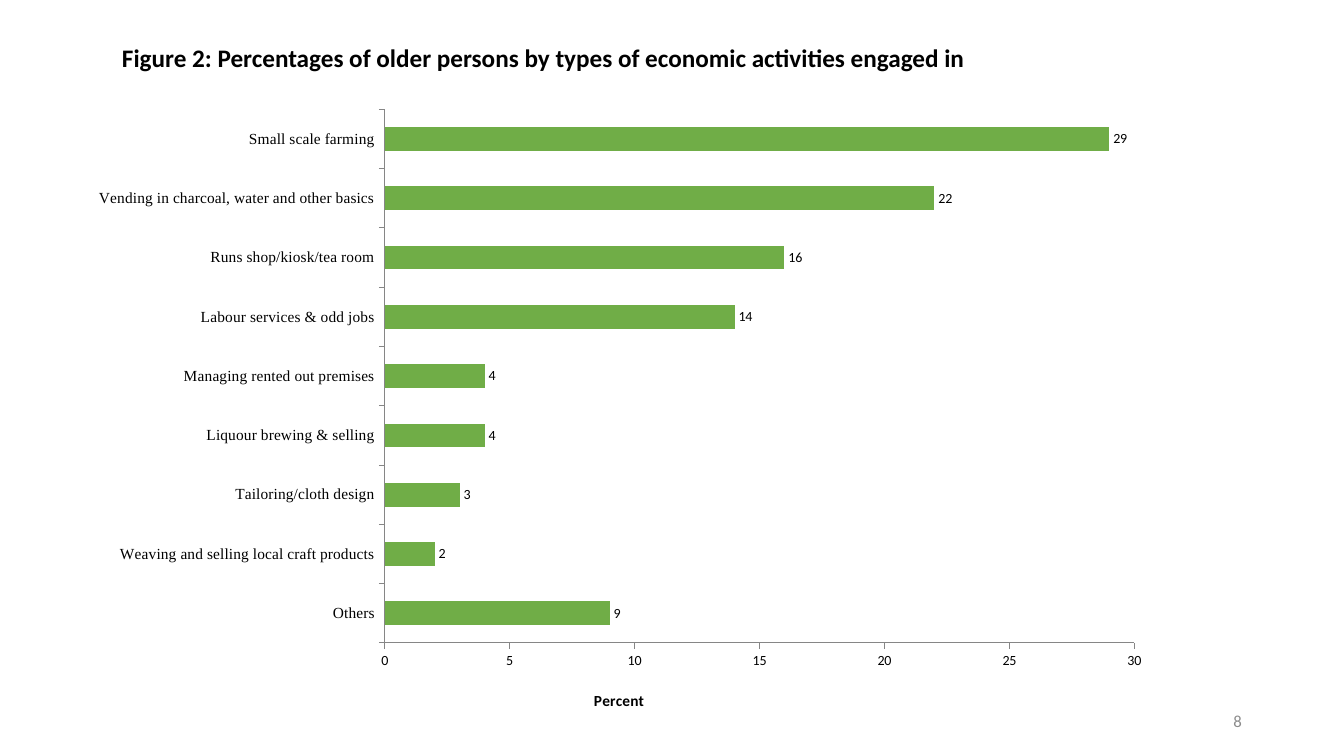
from lxml import etree
from pptx import Presentation
from pptx.chart.data import CategoryChartData
from pptx.dml.color import RGBColor
from pptx.enum.chart import XL_CHART_TYPE, XL_LABEL_POSITION, XL_TICK_MARK
from pptx.enum.text import MSO_ANCHOR, MSO_AUTO_SIZE, PP_ALIGN
from pptx.oxml.ns import qn
from pptx.util import Cm, Pt

BAR_CLUSTERED = XL_CHART_TYPE.BAR_CLUSTERED
OUTSIDE_END = XL_LABEL_POSITION.OUTSIDE_END
TICK_OUTSIDE = XL_TICK_MARK.OUTSIDE
MIDDLE = MSO_ANCHOR.MIDDLE
NO_AUTOFIT = MSO_AUTO_SIZE.NONE
LEFT, RIGHT = PP_ALIGN.LEFT, PP_ALIGN.RIGHT

BLACK = RGBColor(0x00, 0x00, 0x00)
GREY = RGBColor(0x8C, 0x8C, 0x8C)
AXIS_GREY = RGBColor(0x86, 0x86, 0x86)
GREEN = RGBColor(0x70, 0xAD, 0x47)

TITLE = "Figure 2: Percentages of older persons by types of economic activities engaged in"
ACTIVITIES = {
    "Others": 9,
    "Weaving and selling local craft products": 2,
    "Tailoring/cloth design": 3,
    "Liquour brewing & selling": 4,
    "Managing rented out premises": 4,
    "Labour services & odd jobs": 14,
    "Runs shop/kiosk/tea room": 16,
    "Vending in charcoal, water and other basics": 22,
    "Small scale farming": 29,
}


def style_font(font, size, color=BLACK, name="Calibri", bold=False):
    font.name = name
    font.size = Pt(size)
    font.bold = bold
    font.color.rgb = color


def fill_text(box, text, size, color, align, bold=False):
    frame = box.text_frame
    frame.text = text
    frame.word_wrap = True
    frame.auto_size = NO_AUTOFIT
    frame.vertical_anchor = MIDDLE
    para = frame.paragraphs[0]
    para.alignment = align
    style_font(para.runs[0].font, size, color, bold=bold)


def add_title(page):
    box = page.shapes.title
    box.left, box.top, box.width, box.height = Cm(2.82), Cm(0.94), Cm(21.8), Cm(1.02)
    fill_text(box, TITLE, 18, BLACK, LEFT, bold=True)


def add_page_number(page, number):
    box = page.shapes.add_textbox(Cm(23.93), Cm(17.65), Cm(7.62), Cm(1.02))
    fill_text(box, str(number), 12, GREY, RIGHT)


def place_manually(parent, index, **settings):
    for old in parent.findall(qn("c:layout")):
        parent.remove(old)
    layout = etree.Element(qn("c:layout"))
    manual = etree.SubElement(layout, qn("c:manualLayout"))
    for tag, value in settings.items():
        etree.SubElement(manual, qn("c:" + tag)).set("val", str(value))
    parent.insert(index, layout)


def style_axis(axis, size, name="Calibri"):
    axis.has_major_gridlines = False
    axis.major_tick_mark = TICK_OUTSIDE
    axis.format.line.color.rgb = AXIS_GREY
    axis.format.line.width = Pt(0.75)
    style_font(axis.tick_labels.font, size, name=name)


def style_bars(plot):
    plot.gap_width = 150
    plot.vary_by_categories = False
    fill = plot.series[0].format.fill
    fill.solid()
    fill.fore_color.rgb = GREEN
    plot.has_data_labels = True
    labels = plot.data_labels
    labels.show_value = True
    labels.number_format = "0"
    labels.number_format_is_linked = False
    labels.position = OUTSIDE_END
    style_font(labels.font, 10)


def add_axis_title(axis, text):
    title = axis.axis_title
    title.text_frame.text = text
    style_font(title.text_frame.paragraphs[0].runs[0].font, 11, bold=True)
    place_manually(title._element, 1, xMode="edge", yMode="edge", x=0.47, y=0.94)


def add_activity_chart(page):
    data = CategoryChartData(number_format="0")
    data.categories = list(ACTIVITIES)
    data.add_series("Series 1", list(ACTIVITIES.values()))
    chart = page.shapes.add_chart(
        BAR_CLUSTERED, Cm(2.03), Cm(2.44), Cm(27.38), Cm(15.82), data
    ).chart
    chart.has_legend = False
    chart.has_title = False
    style_font(chart.font, 10)
    style_bars(chart.plots[0])
    style_axis(chart.category_axis, 11, "Times New Roman")

    percent = chart.value_axis
    style_axis(percent, 10)
    percent.minimum_scale, percent.maximum_scale, percent.major_unit = 0, 30, 5
    percent.tick_labels.number_format = "0"
    percent.tick_labels.number_format_is_linked = False
    add_axis_title(percent, "Percent")

    plot_area = chart._chartSpace.find(".//" + qn("c:plotArea"))
    place_manually(plot_area, 0, layoutTarget="inner", xMode="edge", yMode="edge",
                   x=0.28, y=0.02, w=0.69, h=0.85)


def main():
    deck = Presentation()
    deck.slide_width, deck.slide_height = Cm(33.87), Cm(19.05)
    page = deck.slides.add_slide(deck.slide_layouts[5])
    add_activity_chart(page)
    add_title(page)
    add_page_number(page, 8)
    deck.save("out.pptx")


if __name__ == "__main__":
    main()
